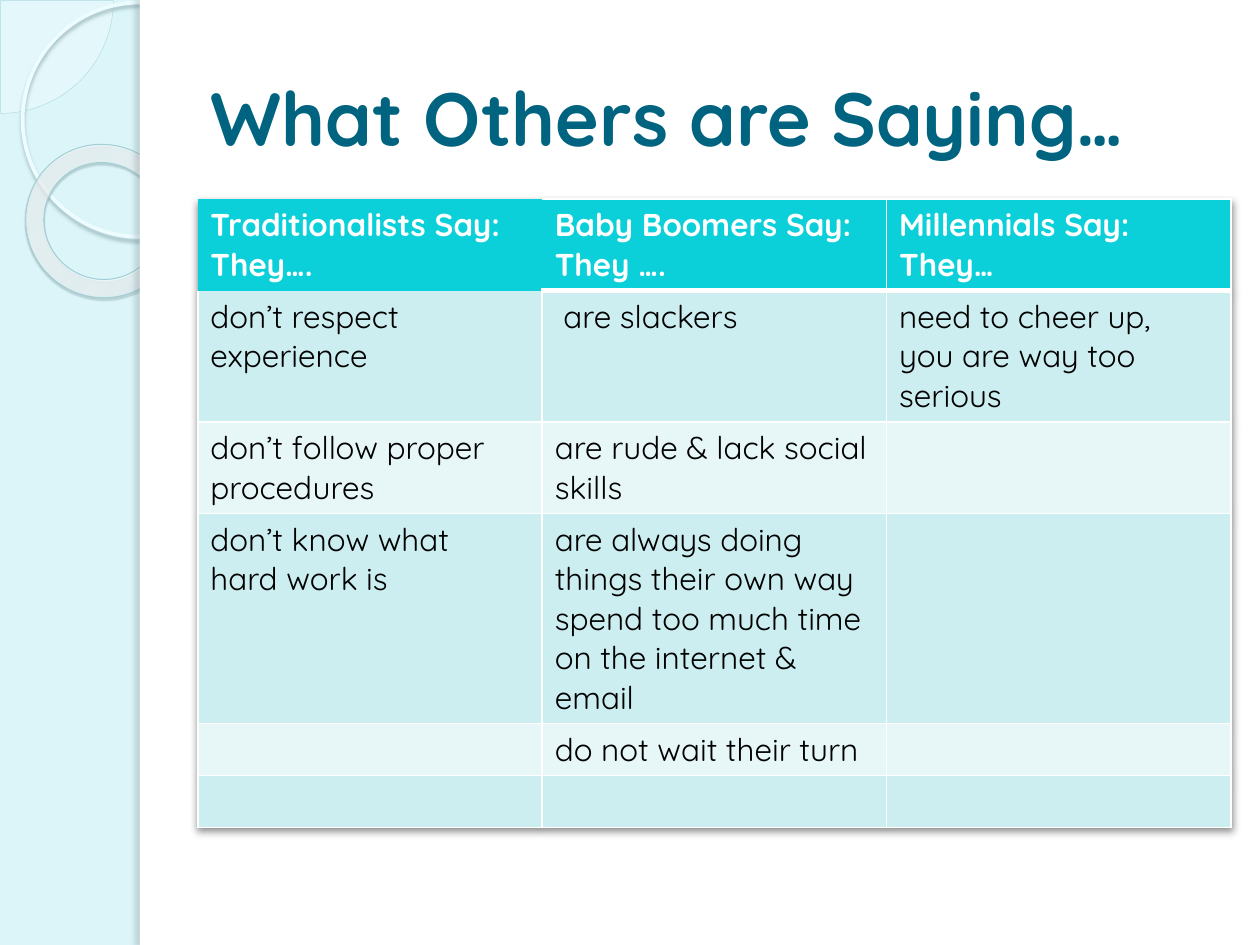
from pptx import Presentation
from pptx.dml.color import RGBColor as RGB
from pptx.enum.shapes import MSO_SHAPE as Kind
from pptx.enum.text import MSO_ANCHOR as Anchor, PP_ALIGN as Align
from pptx.oxml import parse_xml as to_xml
from pptx.oxml.ns import qn
from pptx.util import Inches, Pt

NS = 'xmlns:a="http://schemas.openxmlformats.org/drawingml/2006/main"'
FONT = "Quicksand"
HEX = {
    "back": "DBF5F9", "white": "FFFFFF", "black": "000000", "title": "00637F",
    "head": "0BD0D9", "odd": "CCEEF1", "even": "E7F7F8",
    "pie": "F8FEFF", "pie_line": "AFDBE2", "ring": "EDFCFF", "donut_line": "A1CFD6",
    "ring_dim": "9CB9BE", "donut_dim": "4B5E61", "edge_dim": "6C7A7C",
}


def add_part(kind, box, fill=None, line=None, width=0):
    shape = slide.shapes.add_shape(kind, *[Inches(n) for n in box])
    shape.shadow.inherit = False
    if fill:
        shape.fill.solid()
        shape.fill.fore_color.rgb = RGB.from_string(HEX[fill])
    else:
        shape.fill.background()
    if line:
        shape.line.color.rgb = RGB.from_string(HEX[line])
        shape.line.width = Pt(width)
    else:
        shape.line.fill.background()
    return shape


def shade(effects, color, alpha, blur, dist, angle):
    """Put an outer shadow into an effect list."""
    effects.append(to_xml(
        f'<a:outerShdw {NS} blurRad="{Pt(blur)}" dist="{Pt(dist)}" dir="{angle * 60000}" '
        f'algn="tl" rotWithShape="0"><a:srgbClr val="{HEX[color]}">'
        f'<a:alpha val="{alpha * 1000}"/></a:srgbClr></a:outerShdw>'))


prs = Presentation()
prs.slide_width, prs.slide_height = Inches(10), Inches(7.5)
slide = prs.slides.add_slide(prs.slide_layouts[5])
slide.background.fill.solid()
slide.background.fill.fore_color.rgb = RGB.from_string(HEX["back"])

# Side band: pie, ring and donut, cut off by the white page
pie = add_part(Kind.PIE, (-0.89, -0.89, 1.79, 1.79), "pie", "pie_line", 0.25)
pie.adjustments[0], pie.adjustments[1] = 0, 54.02
tint = pie.fill._xPr.find(qn("a:solidFill"))[0]
tint.append(to_xml(f'<a:alpha {NS} val="33000"/>'))

ring = add_part(Kind.OVAL, (0.18, 0.02, 1.86, 1.86), None, "ring", 2.15)
shade(ring._element.spPr.find(qn("a:effectLst")), "ring_dim", 85, 2, 2, 90)

donut = add_part(Kind.DONUT, (0.2, 1.15, 1.23, 1.21), "pie", "donut_line", 0.58)
donut.adjustments[0] = 0.12
donut.rotation = 38.6
props = donut._element.spPr
stops = "".join(
    f'<a:gs pos="{pos}000"><a:srgbClr val="{color}"><a:alpha val="{alpha}000"/></a:srgbClr></a:gs>'
    for pos, color, alpha in [(0, "F9FEFF", 70), (70, "FDFFFF", 55), (100, "9EF2FF", 60)])
props.replace(props.find(qn("a:solidFill")), to_xml(
    f'<a:gradFill {NS} rotWithShape="1"><a:gsLst>{stops}</a:gsLst><a:path path="circle">'
    '<a:fillToRect l="-408000" t="-50000" r="508000" b="150000"/></a:path></a:gradFill>'))
shade(props.find(qn("a:effectLst")), "donut_dim", 35, 1, 1.2, 75)

add_part(Kind.RECTANGLE, (1.11, 0, 8.89, 7.5), "white")
edge = add_part(Kind.RECTANGLE, (1.11, 0, 0.08, 7.5), "white")
shade(edge._element.spPr.find(qn("a:effectLst")), "edge_dim", 25, 3, 3, 180)

# Title, brought in front of the white page
title = slide.shapes.title
slide.shapes._spTree.append(title._element)
title.left, title.top, title.width, title.height = [Inches(n) for n in (1.57, 0.3, 8.2, 1.25)]
frame = title.text_frame
frame.text = "What Others are Saying…"
frame.vertical_anchor = Anchor.MIDDLE
frame.paragraphs[0].alignment = Align.LEFT
font = frame.paragraphs[0].runs[0].font
font.name, font.size, font.bold = FONT, Pt(43), True
font.color.rgb = RGB.from_string(HEX["title"])

# Table: each line break starts a new paragraph
rows = [
    ["Traditionalists Say:\nThey….", "Baby Boomers Say:\nThey ….", "Millennials Say:\nThey…"],
    ["don’t respect\nexperience", " are slackers", "need to cheer up,\nyou are way too\nserious"],
    ["don’t follow proper\nprocedures", "are rude & lack social skills", ""],
    ["don’t know what\nhard work is",
     "are always doing\nthings their own way\nspend too much time on the internet & email", ""],
    ["", "do not wait their turn", ""],
    ["", "", ""],
]
grid = slide.shapes.add_table(
    len(rows), 3, Inches(1.57), Inches(1.58), Inches(8.2), Inches(0.41 * len(rows))).table
effects = to_xml(f"<a:effectLst {NS}/>")
shade(effects, "black", 45, 4, 2, 90)
grid._tbl.tblPr.insert(0, effects)

for r, texts in enumerate(rows):
    for c, text in enumerate(texts):
        cell = grid.cell(r, c)
        cell.text = text
        for para in cell.text_frame.paragraphs:
            for run in para.runs:
                run.font.name, run.font.size, run.font.bold = FONT, Pt(18), r == 0
                run.font.color.rgb = RGB.from_string(HEX["black" if r else "white"])
        # The first header cell has no borders, the other two a thick bottom
        sides = dict.fromkeys("LRTB", 1)
        if r == 0:
            sides["B"] = 3
            if c == 0:
                sides = dict.fromkeys("LRTB", 0)
            elif c == 1:
                sides["L"] = 0
        elif r == 1:
            sides["T"] = 3 if c else 0
        for side, width in sides.items():
            paint = (f'<a:solidFill><a:srgbClr val="{HEX["white"]}"/></a:solidFill>'
                     if width else "<a:noFill/>")
            cell._tc.get_or_add_tcPr().append(to_xml(
                f'<a:ln{side} {NS} w="{Pt(width)}">{paint}</a:ln{side}>'))
        cell.fill.solid()
        tone = "head" if r == 0 else "odd" if r % 2 else "even"
        cell.fill.fore_color.rgb = RGB.from_string(HEX[tone])

prs.save("out.pptx")
